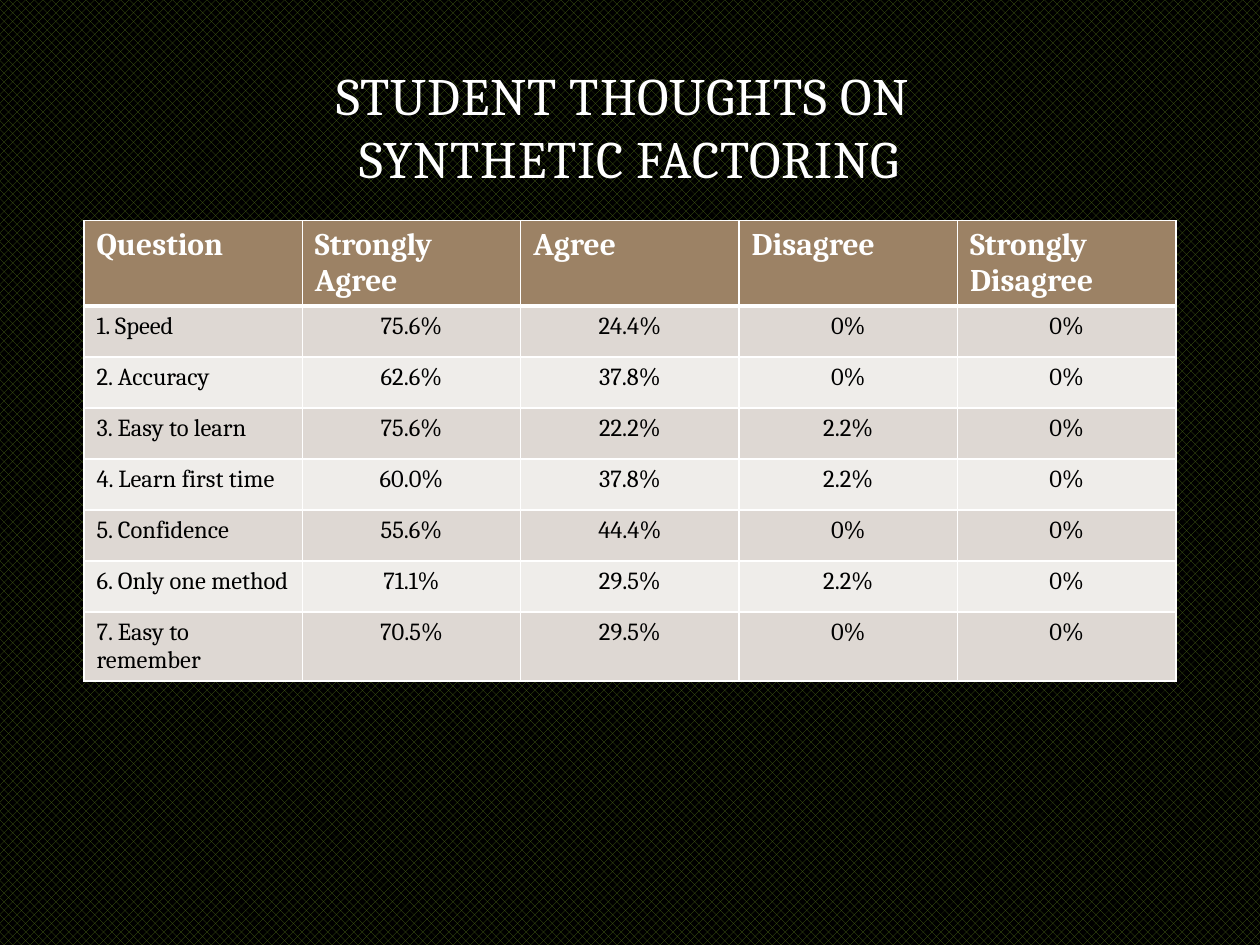
import pptx
import pptx.util
import pptx.dml.color
import pptx.enum.dml
import pptx.enum.text
import pptx.oxml.ns
import lxml.etree

RGBColor = pptx.dml.color.RGBColor
ALIGN = pptx.enum.text.PP_ALIGN
ANCHOR = pptx.enum.text.MSO_ANCHOR
Pt = pptx.util.Pt
Inches = pptx.util.Inches
qn = pptx.oxml.ns.qn

WHITE = RGBColor(0xFF, 0xFF, 0xFF)
BLACK = RGBColor(0, 0, 0)
GREEN = RGBColor(0x4A, 0x67, 0x17)
TAN = RGBColor(0x9C, 0x82, 0x65)
BANDS = (RGBColor(0xDE, 0xD8, 0xD3), RGBColor(0xEF, 0xED, 0xEA))
FONT = "Cambria"
MARGIN = 1 / 15

HEADER = ["Question", "Strongly Agree", "Agree", "Disagree", "Strongly Disagree"]
ANSWERS = [
    ["1. Speed", "75.6%", "24.4%", "0%", "0%"],
    ["2. Accuracy", "62.6%", "37.8%", "0%", "0%"],
    ["3. Easy to learn", "75.6%", "22.2%", "2.2%", "0%"],
    ["4. Learn first time", "60.0%", "37.8%", "2.2%", "0%"],
    ["5. Confidence", "55.6%", "44.4%", "0%", "0%"],
    ["6. Only one method", "71.1%", "29.5%", "2.2%", "0%"],
    ["7. Easy to remember", "70.5%", "29.5%", "0%", "0%"],
]


def write(tf, text, size, color, bold=False, align=ALIGN.LEFT, spacing=0):
    tf.text = text
    p = tf.paragraphs[0]
    p.alignment = align
    for r in p.runs:
        r.font.name = FONT
        r.font.size = Pt(size)
        r.font.bold = bold
        r.font.color.rgb = color
        if spacing:
            r.font._element.set("spc", str(int(spacing * 100)))


def set_borders(cell, color, **widths):
    tc_pr = cell._tc.get_or_add_tcPr()
    for i, side in enumerate("LRTB"):
        width = Pt(widths.get(side, 1))
        ln = lxml.etree.Element(qn(f"a:ln{side}"), w=str(width))
        fill = lxml.etree.SubElement(ln, qn("a:solidFill"))
        lxml.etree.SubElement(fill, qn("a:srgbClr"), val=str(color))
        tc_pr.insert(i, ln)


def fill_background(s):
    fill = s.background.fill
    fill.patterned()
    fill.pattern = pptx.enum.dml.MSO_PATTERN.PERCENT_50
    fill.fore_color.rgb = GREEN
    fill.back_color.rgb = BLACK


def place_title(s, left, top, width, height):
    sp = s.shapes.title
    sp.left, sp.top, sp.width, sp.height = left, top, width, height
    tf = sp.text_frame
    tf.word_wrap = True
    tf.auto_size = pptx.enum.text.MSO_AUTO_SIZE.NONE
    tf.vertical_anchor = ANCHOR.BOTTOM
    write(tf, "STUDENT THOUGHTS ON \vSYNTHETIC FACTORING", 30, WHITE,
          align=ALIGN.CENTER, spacing=0.5)


def place_answers(s, left, top, width, row_height):
    rows = [HEADER] + ANSWERS
    table = s.shapes.add_table(len(rows), len(HEADER), left, top, width,
                               row_height * len(rows)).table
    for i, row in enumerate(rows):
        table.rows[i].height = row_height
        for j, text in enumerate(row):
            cell = table.cell(i, j)
            cell.fill.solid()
            if i == 0:
                cell.fill.fore_color.rgb = TAN
                write(cell.text_frame, text, 18, WHITE, bold=True)
            else:
                cell.fill.fore_color.rgb = BANDS[(i - 1) % 2]
                write(cell.text_frame, text, 14, BLACK,
                      align=ALIGN.CENTER if j else ALIGN.LEFT)
            set_borders(cell, WHITE, B=3 if i == 0 else 1, T=3 if i == 1 else 1)


def main():
    prs = pptx.Presentation()
    prs.slide_width, prs.slide_height = Inches(10), Inches(7.5)
    w, h = prs.slide_width, prs.slide_height
    s = prs.slides.add_slide(prs.slide_layouts[5])
    left, width = int(w * MARGIN), int(w * (1 - 2 * MARGIN))
    fill_background(s)
    place_title(s, left, int(h * 0.04), width, int(h / 6))
    place_answers(s, left, int(h * 7 / 30), width, int(h * 0.054))
    prs.save("out.pptx")


if __name__ == "__main__":
    main()
